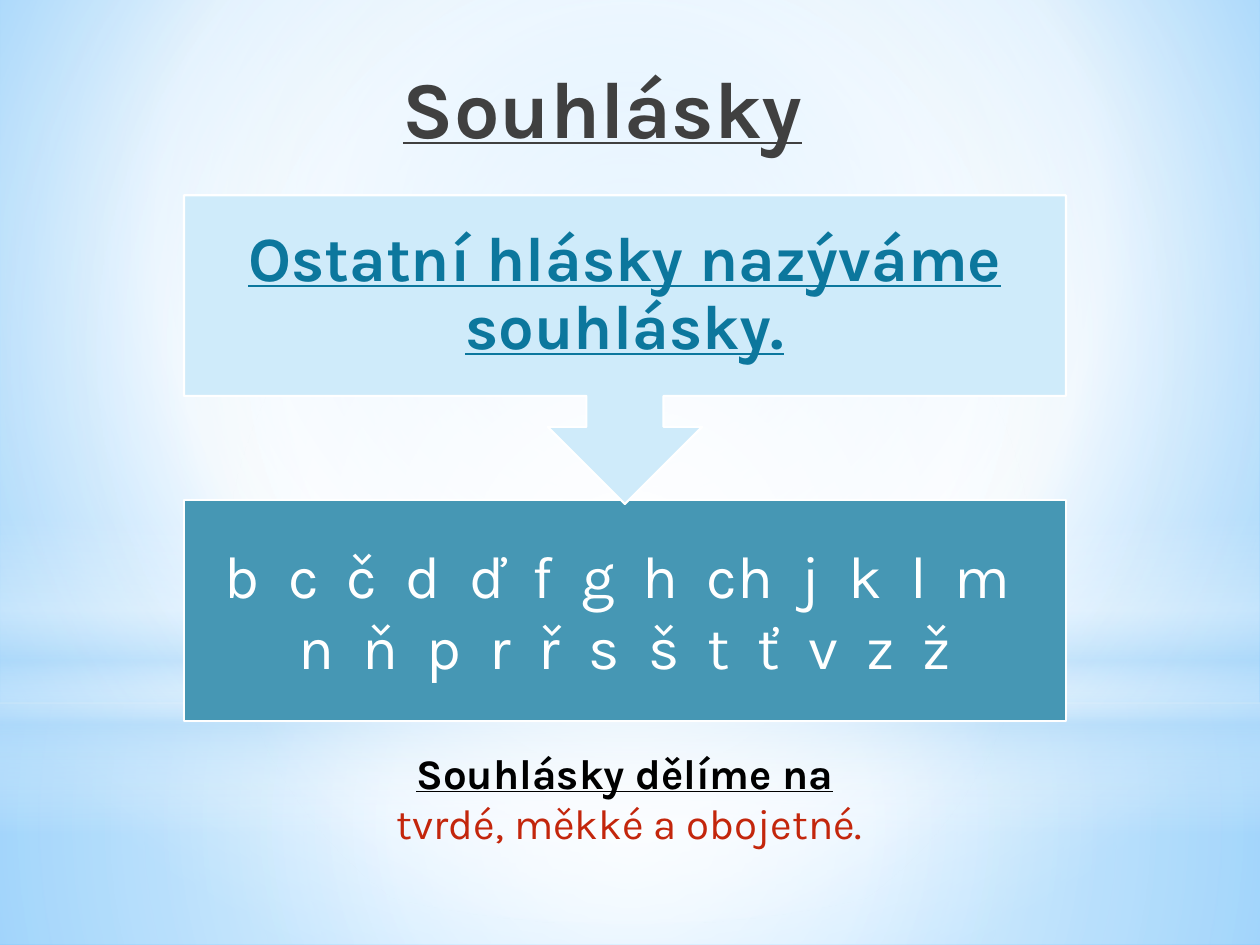
from pptx import Presentation
from pptx.dml.color import RGBColor
from pptx.enum.shapes import MSO_SHAPE as Shape
from pptx.enum.text import MSO_ANCHOR as Anchor, PP_ALIGN as Align
from pptx.oxml import parse_xml
from pptx.oxml.ns import nsdecls, qn
from pptx.util import Inches, Pt

FONT = "Karla"
LEFT, WIDTH = 1.46, 7
CENTRE = (50, 50, 50, 50)
LETTERS = "b c č d ď f g h ch j k l m n ň p r ř s š t ť v z ž".split()


def colour(value):
    """Turn a hex string into a colour."""
    return RGBColor.from_string(value)


def radial(left, top, right, bottom):
    """Describe a circular gradient around a focus given in percent."""
    return (f'<a:path path="circle"><a:fillToRect l="{left * 1000}" t="{top * 1000}" '
            f'r="{right * 1000}" b="{bottom * 1000}"/></a:path>')


def linear(angle):
    """Describe a straight gradient at an angle in degrees."""
    return f'<a:lin ang="{angle * 60000}" scaled="0"/>'


def paint_gradient(fill, owner, stops, direction):
    """Give a fill stops of position, colour and opacity in percent."""
    fill.gradient()
    plain = next(owner.iter(qn("a:gradFill")))
    marks = "".join(
        f'<a:gs pos="{position * 1000}"><a:srgbClr val="{tint}">'
        f'<a:alpha val="{opacity * 1000}"/></a:srgbClr></a:gs>'
        for position, tint, opacity in stops)
    plain.getparent().replace(plain, parse_xml(
        f'<a:gradFill {nsdecls("a")} rotWithShape="1">'
        f'<a:gsLst>{marks}</a:gsLst>{direction}</a:gradFill>'))


def add_glow(slide, preset, top, height, stops, direction):
    """Add a full-width translucent layer of the backdrop."""
    glow = slide.shapes.add_shape(preset, 0, Inches(top), Inches(10), Inches(height))
    glow.shadow.inherit = False
    glow.line.fill.background()
    paint_gradient(glow.fill, glow.element, stops, direction)


def add_panel(slide, preset, top, height, tint):
    """Add a filled panel with a white outline."""
    panel = slide.shapes.add_shape(
        preset, Inches(LEFT), Inches(top), Inches(WIDTH), Inches(height))
    panel.shadow.inherit = False
    panel.fill.solid()
    panel.fill.fore_color.rgb = colour(tint)
    panel.line.color.rgb = colour("FFFFFF")
    panel.line.width = Pt(1.25)
    return panel


def write(frame, lines, size, anchor=Anchor.MIDDLE, inset=None, spacing=None):
    """Fill a frame with centred lines of text, colour and emphasis."""
    frame.word_wrap = True
    frame.vertical_anchor = anchor
    if inset is not None:
        frame.margin_left = frame.margin_right = Inches(inset)
        frame.margin_top = frame.margin_bottom = Inches(inset)
    for index, (words, tint, strong) in enumerate(lines):
        line = frame.add_paragraph() if index else frame.paragraphs[0]
        line.alignment = Align.CENTER
        line.line_spacing = spacing
        run = line.add_run()
        run.text = words
        run.font.name = FONT
        run.font.size = Pt(size)
        run.font.bold = run.font.underline = strong
        run.font.color.rgb = colour(tint)


def add_text(slide, left, top, width, height, lines, size, **layout):
    """Add a text box."""
    box = slide.shapes.add_textbox(
        Inches(left), Inches(top), Inches(width), Inches(height))
    write(box.text_frame, lines, size, **layout)


def add_backdrop(slide):
    """Paint the blue background and its layers of light."""
    paint_gradient(
        slide.background.fill, slide.element,
        [(0, "9ED5FF", 100), (60, "FFFFFF", 100), (100, "5BB9FF", 100)],
        radial(20, 10, 20, 60))
    add_glow(slide, Shape.RECTANGLE, 5.58, 1.92,
             [(0, "FFFFFF", 91), (37, "FFFFFF", 76), (100, "B4DCFA", 79)],
             radial(*CENTRE))
    add_glow(slide, Shape.RECTANGLE, 0, 5.58,
             [(0, "FFFFFF", 89), (48, "FFFFFF", 62), (100, "B4DCFA", 79)],
             radial(*CENTRE))
    add_glow(slide, Shape.RECTANGLE, 4.12, 2.5,
             [(0, "FFFFFF", 0), (29, "FFFFFF", 30), (45, "B4DCFA", 40),
              (55, "FFFFFF", 26), (65, "B4DCFA", 60), (100, "FFFFFF", 0)],
             linear(90))
    add_glow(slide, Shape.OVAL, 1.75, 5.58,
             [(0, "FFFFFF", 100), (56, "FFFFFF", 0)], radial(*CENTRE))


def main():
    """Build the slide on consonants."""
    deck = Presentation()
    deck.slide_width, deck.slide_height = Inches(10), Inches(7.5)
    slide = deck.slides.add_slide(deck.slide_layouts[6])
    add_backdrop(slide)
    add_text(slide, 1.22, 0.29, 7.12, 1.1, [("Souhlásky", "404040", True)], 46)

    consonants = add_panel(slide, Shape.RECTANGLE, 3.97, 1.75, "4697B4")
    write(consonants.text_frame, [("  ".join(LETTERS), "FFFFFF", False)], 34, inset=0.26)

    callout = add_panel(slide, Shape.UP_ARROW_CALLOUT, 1.55, 2.45, "CFEBFA")
    callout.rotation = 180
    add_text(slide, LEFT, 1.55, WIDTH, 1.59,
             [("Ostatní hlásky nazýváme souhlásky.", "0C779D", True)],
             36, inset=0.28, spacing=0.9)

    add_text(slide, LEFT, 5.88, WIDTH, 0.91,
             [("Souhlásky dělíme na", "000000", True),
              (" tvrdé, měkké a obojetné.", "C3260C", False)],
             24, anchor=Anchor.TOP)
    deck.save("out.pptx")


if __name__ == "__main__":
    main()
